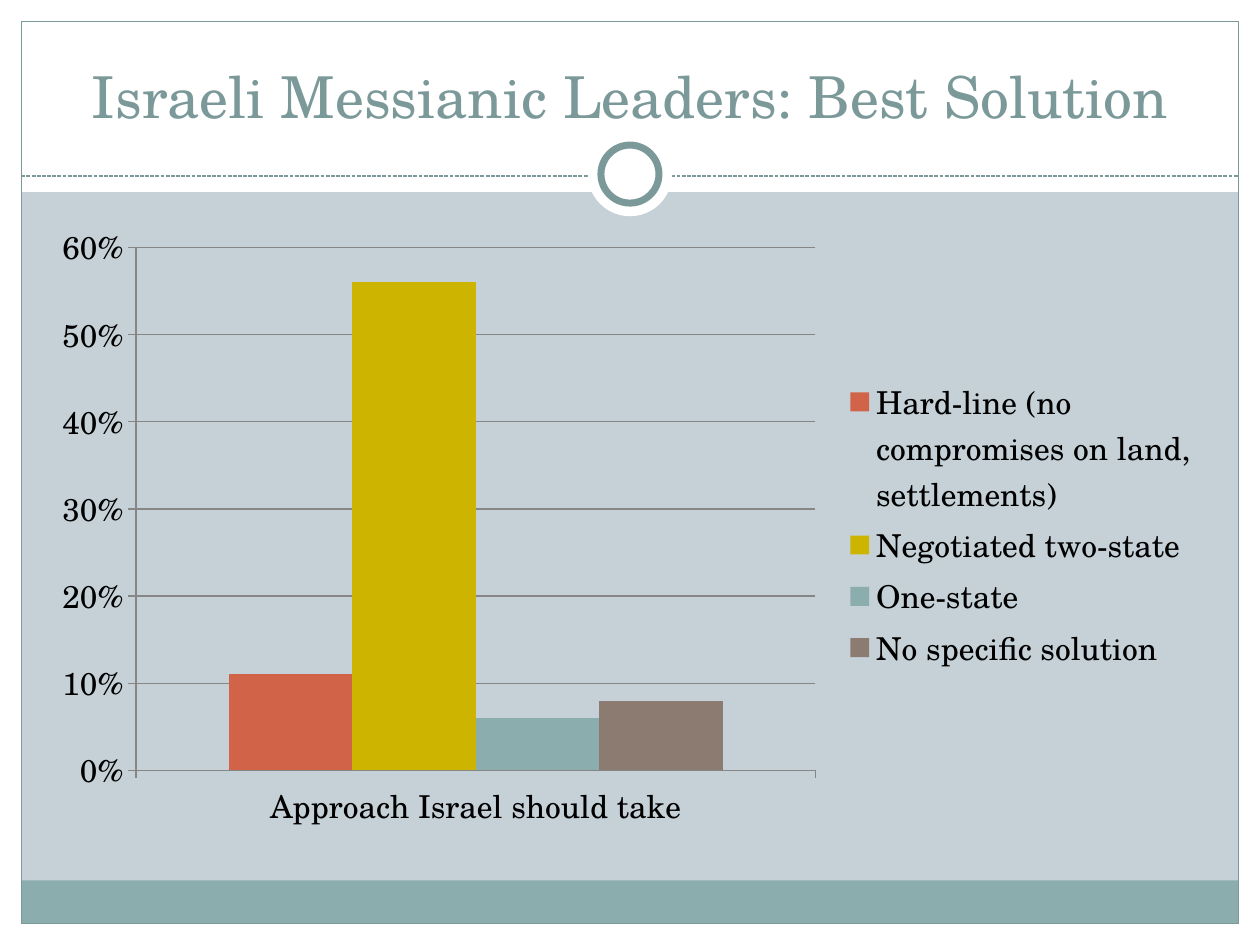
from dataclasses import dataclass

import lxml.etree
import pptx
import pptx.chart.data
import pptx.dml.color
import pptx.enum.chart
import pptx.enum.dml
import pptx.enum.shapes
import pptx.enum.text
import pptx.oxml
import pptx.oxml.ns
import pptx.util

Cm = pptx.util.Cm
Pt = pptx.util.Pt
RGB = pptx.dml.color.RGBColor.from_string
qn = pptx.oxml.ns.qn
SHAPES = pptx.enum.shapes.MSO_SHAPE


@dataclass
class Theme:
    font: str = "TeX Gyre Schola"
    title_size: int = 33
    chart_size: int = 18
    background: str = "C5D1D7"
    paper: str = "FFFFFF"
    accent: str = "7C999A"
    band: str = "8CADAE"
    text: str = "000000"
    grid: str = "868686"


theme = Theme()


def set_text(text_frame, text, *, size, color, align, anchor):
    text_frame.word_wrap = True
    text_frame.vertical_anchor = anchor
    paragraph = text_frame.paragraphs[0]
    paragraph.text = text
    paragraph.alignment = align
    paragraph.font.name = theme.font
    paragraph.font.size = Pt(size)
    paragraph.font.color.rgb = RGB(color)


def add_panel(kind, left, top, width, height, fill=None, line_width=None):
    shape = slide.shapes.add_shape(kind, Cm(left), Cm(top), Cm(width), Cm(height))
    shape.shadow.inherit = False
    if fill:
        shape.fill.solid()
        shape.fill.fore_color.rgb = RGB(fill)
    else:
        shape.fill.background()
    if line_width:
        shape.line.color.rgb = RGB(theme.accent)
        shape.line.width = Pt(line_width)
    else:
        shape.line.fill.background()


presentation = pptx.Presentation()
page_width, page_height, margin = 25.4, 19.05, 0.43
presentation.slide_width = Cm(page_width)
presentation.slide_height = Cm(page_height)
slide = presentation.slides.add_slide(presentation.slide_layouts[5])
slide.background.fill.solid()
slide.background.fill.fore_color.rgb = RGB(theme.background)

# White margins, header and bottom band
inner_width = page_width - 2 * margin
inner_height = page_height - 2 * margin
for left, top, width, height in (
    (0, page_height - margin, page_width, margin),
    (0, 0, page_width, 3.87),
    (0, 0, margin, page_height),
    (page_width - margin, 0, margin, page_height),
):
    add_panel(SHAPES.RECTANGLE, left, top, width, height, theme.paper)
add_panel(SHAPES.RECTANGLE, margin, 17.75, inner_width, 0.87, theme.band)
add_panel(SHAPES.RECTANGLE, margin, margin, inner_width, inner_height, line_width=0.75)

# Dashed divider
divider = slide.shapes.add_connector(
    pptx.enum.shapes.MSO_CONNECTOR.STRAIGHT,
    Cm(margin), Cm(3.55), Cm(page_width - margin), Cm(3.55),
)
divider.line.color.rgb = RGB(theme.accent)
divider.line.width = Pt(0.75)
divider.line.dash_style = pptx.enum.dml.MSO_LINE.SQUARE_DOT
lxml.etree.SubElement(divider.element.spPr, qn("a:effectLst"))

# Ring centred on the divider
for diameter, line_width in ((1.7, None), (1.17, 4)):
    add_panel(SHAPES.OVAL, (page_width - diameter) / 2, 3.51 - diameter / 2,
              diameter, diameter, theme.paper, line_width)

# Title, brought in front of the header
title = slide.shapes.title
title.left, title.top, title.width, title.height = Cm(0.85), Cm(0.64), Cm(23.7), Cm(2.1)
set_text(title.text_frame, "Israeli Messianic Leaders: Best Solution",
         size=theme.title_size, color=theme.accent,
         align=pptx.enum.text.PP_ALIGN.CENTER, anchor=pptx.enum.text.MSO_ANCHOR.BOTTOM)
title.element.getparent().append(title.element)

# Chart
answers = (
    ("Hard-line (no compromises on land, settlements)", 0.11, "D16349"),
    ("Negotiated two-state", 0.56, "CCB400"),
    ("One-state", 0.06, "8CADAE"),
    ("No specific solution", 0.08, "8C7B70"),
)
chart_data = pptx.chart.data.CategoryChartData(number_format="0%")
chart_data.categories = ["Approach Israel should take"]
for name, share, color in answers:
    chart_data.add_series(name, [share])
chart = slide.shapes.add_chart(
    pptx.enum.chart.XL_CHART_TYPE.COLUMN_CLUSTERED,
    Cm(0.85), Cm(4.23), Cm(23.62), Cm(12.7), chart_data,
).chart
chart.has_title = False
chart.font.name = theme.font
chart.font.size = Pt(theme.chart_size)
chart.font.color.rgb = RGB(theme.text)

plot = chart.plots[0]
plot.gap_width = 150
plot.overlap = 0
plot.vary_by_categories = False
for series, (name, share, color) in zip(plot.series, answers):
    series.format.fill.solid()
    series.format.fill.fore_color.rgb = RGB(color)

# Axes and gridlines
value_axis = chart.value_axis
value_axis.minimum_scale, value_axis.maximum_scale, value_axis.major_unit = 0, 0.6, 0.1
value_axis.has_major_gridlines = True
value_axis.tick_labels.number_format = "0%"
value_axis.tick_labels.number_format_is_linked = False
for axis in (value_axis, chart.category_axis):
    axis.major_tick_mark = pptx.enum.chart.XL_TICK_MARK.OUTSIDE
for lines in (value_axis, chart.category_axis, value_axis.major_gridlines):
    lines.format.line.color.rgb = RGB(theme.grid)
    lines.format.line.width = Pt(0.75)

# Legend, then fixed places for plot and legend as shares of the chart
chart.has_legend = True
chart.legend.position = pptx.enum.chart.XL_LEGEND_POSITION.RIGHT
chart.legend.include_in_layout = False
plot_area = chart.element.find(".//" + qn("c:plotArea"))
legend = chart.element.find(".//" + qn("c:legend"))
for parent, index, target, places in (
    (plot_area, 0, "inner", (0.08, 0.06, 0.58, 0.83)),
    (legend, 1, None, (0.68, 0.26, 0.31, 0.48)),
):
    for old_layout in parent.findall(qn("c:layout")):
        parent.remove(old_layout)
    layout = lxml.etree.Element(qn("c:layout"))
    manual = lxml.etree.SubElement(layout, qn("c:manualLayout"))
    settings = [("layoutTarget", target)] if target else []
    settings += [("xMode", "edge"), ("yMode", "edge"), *zip("xywh", places)]
    for tag, value in settings:
        lxml.etree.SubElement(manual, qn("c:" + tag)).set("val", str(value))
    parent.insert(index, layout)

presentation.save("out.pptx")
